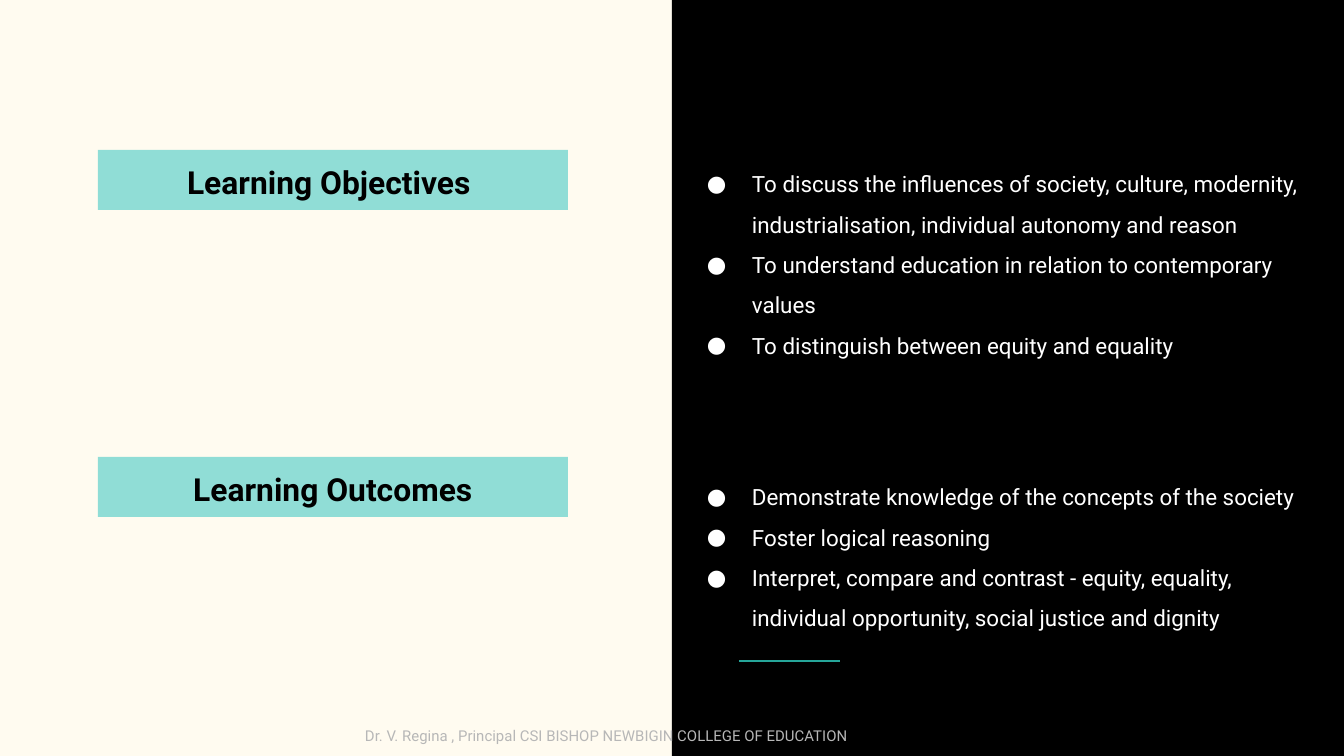
"""Build a split slide of learning objectives and outcomes."""
from dataclasses import dataclass

from lxml.etree import SubElement
from pptx import Presentation
from pptx.dml.color import RGBColor
from pptx.enum.shapes import MSO_CONNECTOR, MSO_SHAPE
from pptx.enum.text import MSO_ANCHOR, PP_ALIGN
from pptx.oxml.ns import qn
from pptx.util import Emu, Pt


@dataclass(frozen=True)
class Theme:
    font: str = "Roboto"
    paper: str = "FFFBF0"
    panel: str = "000000"
    label: str = "90DDD6"
    accent: str = "26A69A"
    dark: str = "000000"
    light: str = "FFFFFF"
    muted: str = "B7B7B7"
    heading: int = 17
    body: int = 12
    footer: int = 8
    rule: float = 1.5


SECTIONS = [
    {
        "heading": "Learning Objectives ",
        "label_top": 150,
        "list_box": (144, 242),
        "points": [
            "To discuss the influences of society, culture, modernity, "
            "industrialisation, individual autonomy and reason",
            "To understand education in relation to contemporary values",
            "To distinguish between equity and equality",
        ],
    },
    {
        "heading": "Learning Outcomes",
        "label_top": 457,
        "list_box": (457, 176),
        "points": [
            "Demonstrate knowledge of the concepts of the society",
            "Foster logical reasoning",
            "Interpret, compare and contrast - equity, equality, "
            "individual opportunity, social justice and dignity",
        ],
    },
]
FOOTER = "Dr. V. Regina , Principal CSI BISHOP NEWBIGIN COLLEGE OF EDUCATION"

THEME = Theme()
WIDTH, HEIGHT = 1344, 756
HALF = WIDTH // 2
LABEL_LEFT, LABEL_WIDTH, LABEL_HEIGHT = 98, 470, 60
FOOTER_BOX = (352, 718, 732, 38)
RULE_LEFT, RULE_RIGHT, RULE_TOP = 739, 840, 661
INSET, INDENT, HANGING = 13, 67, -45


def px(n):
    return Emu(round(n * 914400 / 134.4))


def rgb(value):
    return RGBColor.from_string(value)


def add_bullet(p, color):
    pPr = p._p.get_or_add_pPr()
    pPr.set("marL", str(px(INDENT)))
    pPr.set("indent", str(px(HANGING)))
    clr = SubElement(pPr, qn("a:buClr"))
    SubElement(clr, qn("a:srgbClr"), val=color)
    SubElement(pPr, qn("a:buFont"), typeface=THEME.font)
    SubElement(pPr, qn("a:buChar"), char="●")


def write(sp, lines, *, size, color, bold=False, align=PP_ALIGN.LEFT,
          spacing=None, bullets=False):
    tf = sp.text_frame
    tf.word_wrap = True
    tf.vertical_anchor = MSO_ANCHOR.TOP
    tf.margin_left = tf.margin_top = tf.margin_right = tf.margin_bottom = px(INSET)
    for i, line in enumerate(lines):
        p = tf.add_paragraph() if i else tf.paragraphs[0]
        p.alignment = align
        if spacing:
            p.line_spacing = spacing
        if bullets:
            add_bullet(p, color)
        r = p.add_run()
        r.text = line
        r.font.name = THEME.font
        r.font.size = Pt(size)
        r.font.bold = bold
        r.font.color.rgb = rgb(color)


def add_rect(s, box, fill):
    sp = s.shapes.add_shape(MSO_SHAPE.RECTANGLE, *map(px, box))
    sp.shadow.inherit = False
    sp.fill.solid()
    sp.fill.fore_color.rgb = rgb(fill)
    sp.line.fill.background()
    return sp


def add_rule(s):
    rule = s.shapes.add_connector(
        MSO_CONNECTOR.STRAIGHT,
        *map(px, (RULE_LEFT, RULE_TOP, RULE_RIGHT, RULE_TOP)))
    rule.line.color.rgb = rgb(THEME.accent)
    rule.line.width = Pt(THEME.rule)
    SubElement(rule._element.spPr, qn("a:effectLst"))


def add_section(s, section):
    label = add_rect(
        s, (LABEL_LEFT, section["label_top"], LABEL_WIDTH, LABEL_HEIGHT), THEME.label)
    write(label, [section["heading"]], size=THEME.heading, color=THEME.dark,
          bold=True, align=PP_ALIGN.CENTER)
    top, height = section["list_box"]
    points = s.shapes.add_textbox(*map(px, (HALF, top, HALF, height)))
    write(points, section["points"], size=THEME.body, color=THEME.light,
          spacing=1.5, bullets=True)


def main():
    prs = Presentation()
    prs.slide_width, prs.slide_height = px(WIDTH), px(HEIGHT)
    s = prs.slides.add_slide(prs.slide_layouts[6])
    s.background.fill.solid()
    s.background.fill.fore_color.rgb = rgb(THEME.paper)
    add_rect(s, (HALF, 0, HALF, HEIGHT), THEME.panel)
    add_rule(s)
    for section in SECTIONS:
        add_section(s, section)
    footer = s.shapes.add_textbox(*map(px, FOOTER_BOX))
    write(footer, [FOOTER], size=THEME.footer, color=THEME.muted)
    prs.save("out.pptx")


if __name__ == "__main__":
    main()
